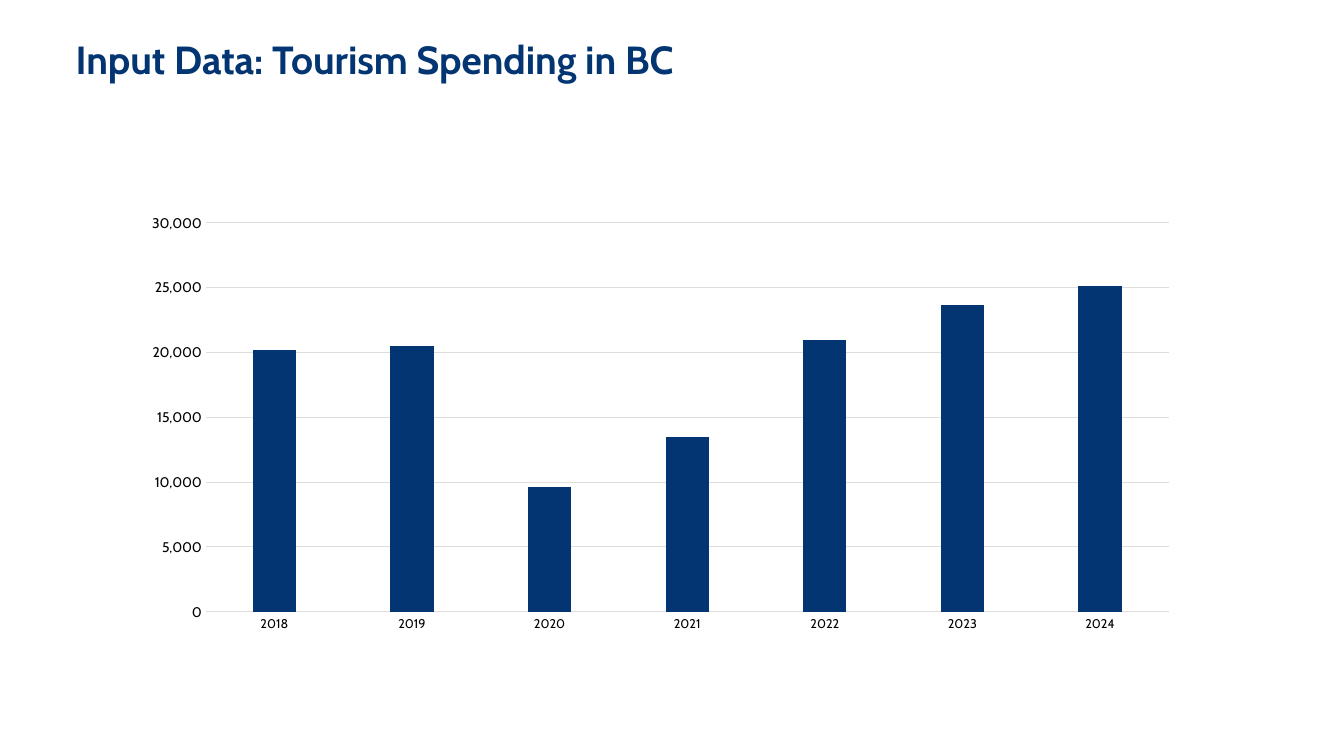
from dataclasses import dataclass

from lxml.etree import SubElement
from pptx import Presentation
from pptx.chart.data import CategoryChartData
from pptx.dml.color import RGBColor
from pptx.enum.chart import XL_CHART_TYPE, XL_TICK_MARK
from pptx.enum.text import MSO_ANCHOR, PP_ALIGN
from pptx.oxml.ns import qn
from pptx.util import Inches, Pt

TITLE = "Input Data: Tourism Spending in BC"
SPENDING = {
    "2018": 20200,
    "2019": 20500,
    "2020": 9600,
    "2021": 13500,
    "2022": 21000,
    "2023": 23700,
    "2024": 25100,
}
TITLE_BOX = (0.65, 0.35, 12.54, 0.65)
CHART_BOX = (0.69, 1.3, 11.24, 5.36)
PLOT_LAYOUT = {"x": 0.12, "y": 0.17, "w": 0.85, "h": 0.72}


@dataclass(frozen=True)
class Theme:
    font: str = "Cabin"
    navy: RGBColor = RGBColor(0x03, 0x35, 0x73)
    black: RGBColor = RGBColor(0, 0, 0)
    grid: RGBColor = RGBColor(0xE0, 0xDC, 0xDD)
    title_size: Pt = Pt(28)
    value_size: Pt = Pt(10)
    category_size: Pt = Pt(9)
    line_width: Pt = Pt(0.75)


THEME = Theme()


def set_font(font, size, color, bold=False):
    font.name = THEME.font
    font.size = size
    font.bold = bold
    font.color.rgb = color


def set_line(line):
    line.color.rgb = THEME.grid
    line.width = THEME.line_width


def add_title(slide):
    title = slide.shapes.title
    title.left, title.top, title.width, title.height = map(Inches, TITLE_BOX)
    frame = title.text_frame
    frame.text = TITLE
    frame.word_wrap = True
    frame.vertical_anchor = MSO_ANCHOR.TOP
    paragraph = frame.paragraphs[0]
    paragraph.alignment = PP_ALIGN.LEFT
    paragraph.line_spacing = 0.9
    set_font(paragraph.font, THEME.title_size, THEME.navy, bold=True)


def set_plot_layout(chart):
    plot_area = chart.plots[0]._element.getparent()
    layout = plot_area.find(qn("c:layout"))
    if layout is None:
        layout = SubElement(plot_area, qn("c:layout"))
        plot_area.insert(0, layout)
    manual = SubElement(layout, qn("c:manualLayout"))
    settings = {"layoutTarget": "inner", "xMode": "edge", "yMode": "edge", **PLOT_LAYOUT}
    for name, value in settings.items():
        SubElement(manual, qn(f"c:{name}")).set("val", str(value))


def add_spending_chart(slide):
    data = CategoryChartData()
    data.categories = list(SPENDING)
    data.add_series("Series 1", list(SPENDING.values()))
    chart = slide.shapes.add_chart(
        XL_CHART_TYPE.COLUMN_CLUSTERED, *map(Inches, CHART_BOX), data
    ).chart
    chart.has_title = False
    chart.has_legend = False
    set_font(chart.font, THEME.value_size, THEME.black)
    set_plot_layout(chart)

    plot = chart.plots[0]
    plot.vary_by_categories = False
    plot.gap_width = 219
    plot.overlap = -27
    fill = plot.series[0].format.fill
    fill.solid()
    fill.fore_color.rgb = THEME.navy

    years, amounts = chart.category_axis, chart.value_axis
    for axis, size in ((years, THEME.category_size), (amounts, THEME.value_size)):
        axis.major_tick_mark = XL_TICK_MARK.NONE
        axis.minor_tick_mark = XL_TICK_MARK.NONE
        set_font(axis.tick_labels.font, size, THEME.black)
    set_line(years.format.line)

    amounts.minimum_scale = 0
    amounts.maximum_scale = 30000
    amounts.major_unit = 5000
    amounts.tick_labels.number_format = "#,##0"
    amounts.tick_labels.number_format_is_linked = False
    amounts.format.line.fill.background()
    set_line(amounts.major_gridlines.format.line)


def main():
    presentation = Presentation()
    presentation.slide_width = Inches(13.33)
    presentation.slide_height = Inches(7.5)
    slide = presentation.slides.add_slide(presentation.slide_layouts.get_by_name("Title Only"))
    add_title(slide)
    add_spending_chart(slide)
    presentation.save("out.pptx")


if __name__ == "__main__":
    main()
